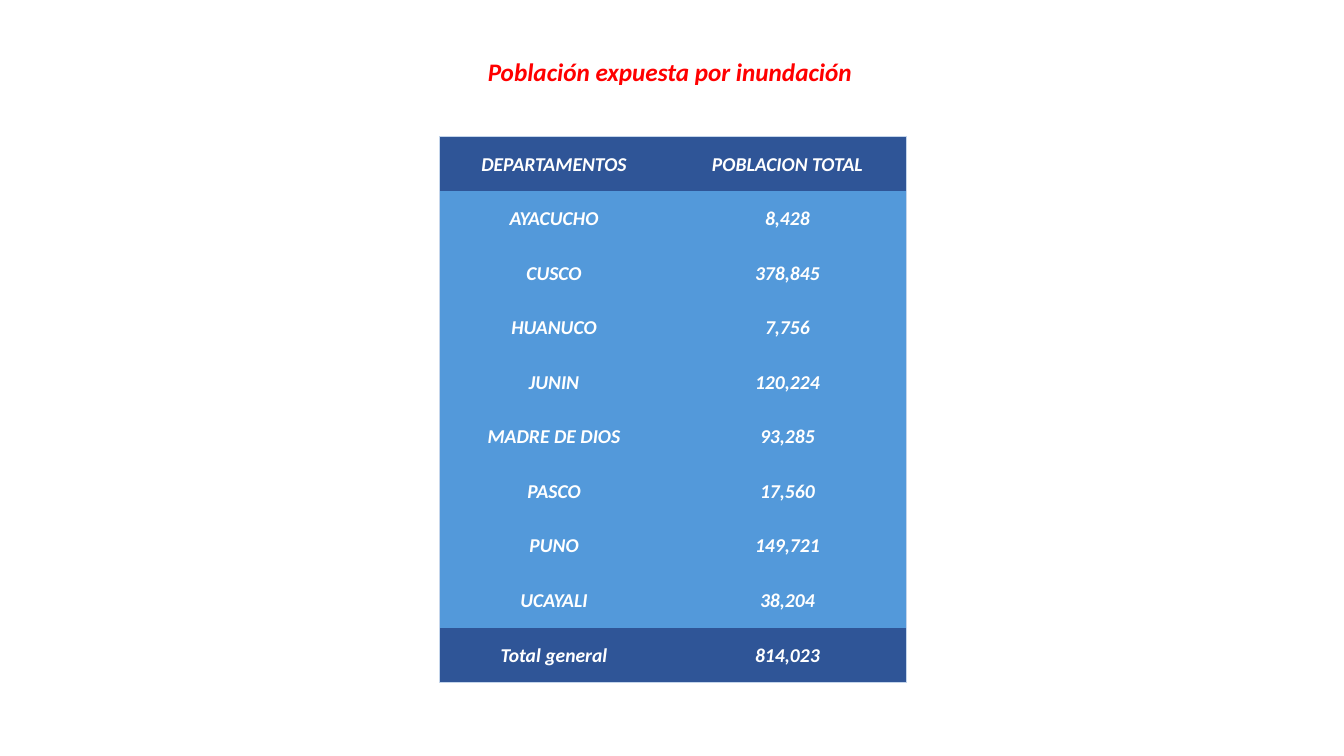
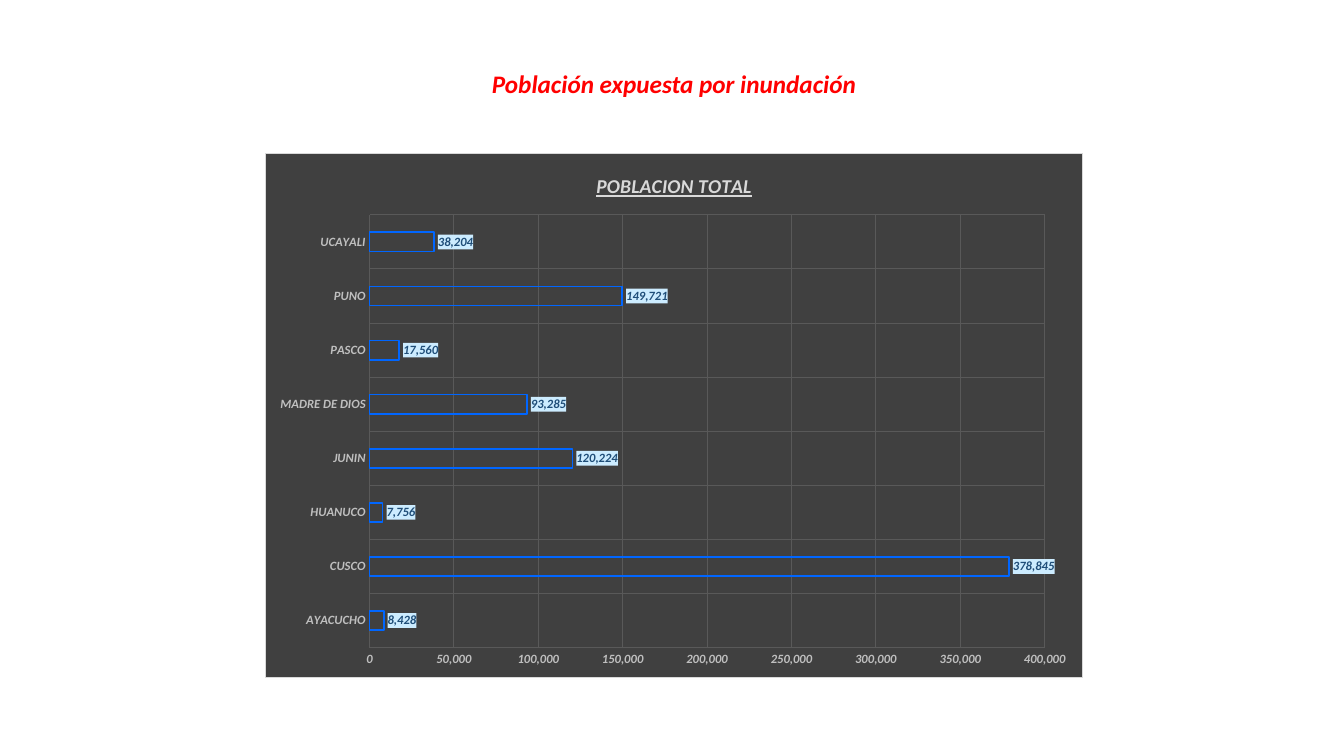
"""Build two slides on the population exposed to floods: a table and a bar chart."""
from lxml import etree
from pptx import Presentation
from pptx.chart.data import CategoryChartData
from pptx.dml.color import RGBColor
from pptx.enum import chart as kinds, text
from pptx.oxml import ns
from pptx.util import Pt

HEX = dict(title="FF0000", head="2F5597", body="5399DA", edge="C4D5EB", white="FFFFFF",
           panel="404040", rim="D9D9D9", axis="BFBFBF", grid="595959", bar="0066FF",
           label="1F4E79", tag="CCECFF")
TITLE = "Población expuesta por inundación"
HEADS = ("DEPARTAMENTOS", "POBLACION TOTAL")
DATA = [("AYACUCHO", 8428), ("CUSCO", 378845), ("HUANUCO", 7756), ("JUNIN", 120224),
        ("MADRE DE DIOS", 93285), ("PASCO", 17560), ("PUNO", 149721), ("UCAYALI", 38204)]
TOTAL = ("Total general", sum(count for _, count in DATA))
COLS = (163.5, 170)
ROW = 39
TABLE = (314, 97.5)
CHART = (189.5, 109, 584, 375)
PLOT = dict(x=0.127, y=0.118, w=0.827, h=0.826)
NUMBER = "#,##0"


def style(font, size, color, **more):
    form = dict(name="Calibri", size=Pt(size), bold=True, italic=True, **more)
    for key, value in form.items():
        setattr(font, key, value)
    font.color.rgb = RGBColor.from_string(HEX[color])


def paint(fill, color):
    fill.solid()
    fill.fore_color.rgb = RGBColor.from_string(HEX[color])


def rule(line, color, width):
    paint(line.fill, color)
    line.width = Pt(width)


def node(home, tag, **attrs):
    return etree.SubElement(home, ns.qn(tag), **attrs)


def solid(home, color):
    node(node(home, "a:solidFill"), "a:srgbClr", val=HEX[color])


def add_title(slide, mid, top):
    wide = 278
    box = slide.shapes.add_textbox(Pt(mid - wide / 2), Pt(top), Pt(wide), Pt(29))
    box.text_frame.word_wrap = True
    para = box.text_frame.paragraphs[0]
    para.alignment = text.PP_ALIGN.CENTER
    run = para.add_run()
    run.text = TITLE
    style(run.font, 18, "title")


def set_edges(cell, sides):
    props = cell._tc.get_or_add_tcPr()
    for side, outer in sides.items():
        line = node(props, f"a:ln{side}", w=str(Pt(0.5)))
        if outer:
            solid(line, "edge")
        else:
            node(line, "a:noFill")


def add_table(slide):
    rows = [HEADS] + [(name, f"{count:,}") for name, count in DATA + [TOTAL]]
    last = len(rows) - 1
    frame = slide.shapes.add_table(len(rows), len(COLS), *map(Pt, TABLE),
                                   Pt(sum(COLS)), Pt(ROW * len(rows)))
    table = frame.table
    for col, wide in zip(table.columns, COLS):
        col.width = Pt(wide)
    form = dict(margin_left=Pt(0.7), margin_right=Pt(0.7), margin_top=Pt(0.7),
                margin_bottom=0, vertical_anchor=text.MSO_ANCHOR.MIDDLE)
    for r, row in enumerate(rows):
        table.rows[r].height = Pt(ROW)
        for c, words in enumerate(row):
            cell = table.cell(r, c)
            set_edges(cell, dict(L=c == 0, R=c == len(COLS) - 1, T=r == 0, B=r == last))
            paint(cell.fill, "head" if r in (0, last) else "body")
            for key, value in form.items():
                setattr(cell, key, value)
            para = cell.text_frame.paragraphs[0]
            para.alignment = text.PP_ALIGN.CENTER
            run = para.add_run()
            run.text = words
            style(run.font, 14, "white")


def set_layout(area):
    for old in area.findall(ns.qn("c:layout")):
        area.remove(old)
    layout = etree.Element(ns.qn("c:layout"))
    manual = node(layout, "c:manualLayout")
    node(manual, "c:layoutTarget", val="inner")
    for key in "xy":
        node(manual, f"c:{key}Mode", val="edge")
    for key, value in PLOT.items():
        node(manual, f"c:{key}", val=str(value))
    area.insert(0, layout)


def set_panel(after, color, edge=None):
    props = etree.Element(ns.qn("c:spPr"))
    solid(props, color)
    if edge:
        solid(node(props, "a:ln", w=str(Pt(0.75))), edge)
    after.addprevious(props)


def add_chart(slide):
    data = CategoryChartData(number_format=NUMBER)
    data.categories = [name for name, _ in DATA]
    data.add_series(HEADS[1], [count for _, count in DATA])
    chart = slide.shapes.add_chart(kinds.XL_CHART_TYPE.BAR_CLUSTERED,
                                   *map(Pt, CHART), data).chart
    chart.has_legend = False
    chart.font.size, chart.font.name = Pt(10), "Calibri"
    chart.has_title = True
    chart.chart_title.include_in_layout = False
    run = chart.chart_title.text_frame.paragraphs[0].add_run()
    run.text = HEADS[1]
    style(run.font, 14, "rim", underline=True)

    for axis in (chart.category_axis, chart.value_axis):
        axis.major_tick_mark = axis.minor_tick_mark = kinds.XL_TICK_MARK.NONE
        axis.has_major_gridlines = True
        rule(axis.major_gridlines.format.line, "grid", 0.75)
        axis.format.line.fill.background()
        style(axis.tick_labels.font, 9, "axis")
    scale = dict(minimum_scale=0, maximum_scale=400000, major_unit=50000)
    for key, value in scale.items():
        setattr(chart.value_axis, key, value)
    ticks = chart.value_axis.tick_labels
    ticks.number_format, ticks.number_format_is_linked = NUMBER, False

    plot = chart.plots[0]
    plot.gap_width, plot.overlap, plot.vary_by_categories = 182, -50, False
    bars = plot.series[0]
    bars.format.fill.background()
    rule(bars.format.line, "bar", 1.25)
    labels = bars.data_labels
    form = dict(show_value=True, number_format=NUMBER, number_format_is_linked=False,
                position=kinds.XL_LABEL_POSITION.OUTSIDE_END)
    for key, value in form.items():
        setattr(labels, key, value)
    style(labels.font, 9, "label")

    root = chart.element
    set_panel(root.xpath(".//c:dLbls/c:txPr")[0], "tag")
    set_panel(root.xpath("./c:txPr")[0], "panel", "rim")
    set_layout(root.xpath(".//c:plotArea")[0])


def main():
    deck = Presentation()
    deck.slide_width, deck.slide_height = Pt(960), Pt(540)
    for mid, top, fill in ((478.5, 37, add_table), (481.5, 45.5, add_chart)):
        slide = deck.slides.add_slide(deck.slide_layouts[6])
        add_title(slide, mid, top)
        fill(slide)
    deck.save("out.pptx")


if __name__ == "__main__":
    main()
